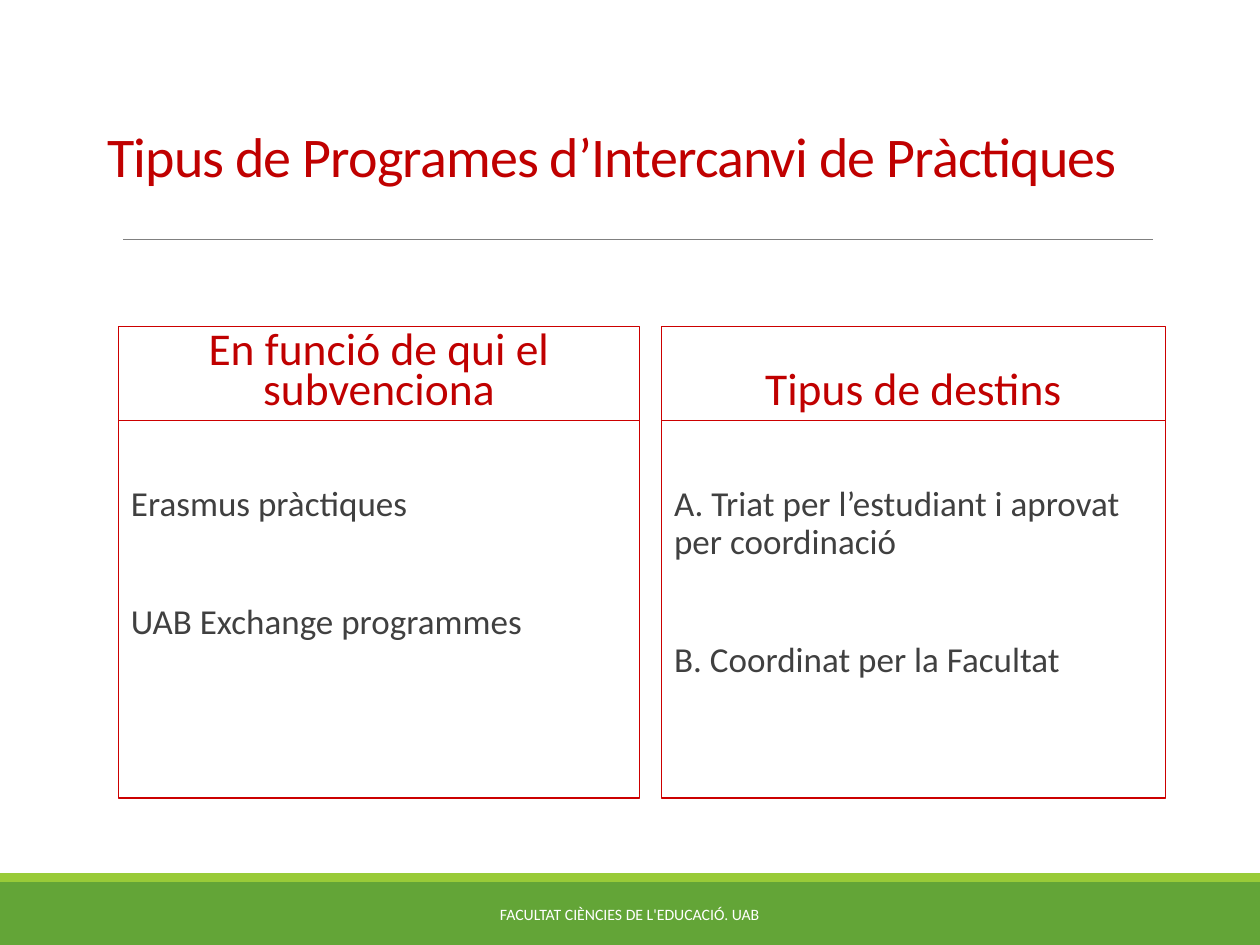
from lxml import etree
from pptx import Presentation
from pptx.dml.color import RGBColor
from pptx.enum import shapes, text
from pptx.oxml.ns import qn
from pptx.util import Pt

RED = RGBColor(0xC0, 0x00, 0x00)
BORDER = RGBColor(0xCC, 0x00, 0x00)
GRAY = RGBColor(0x80, 0x80, 0x80)
DARK = RGBColor(0x40, 0x40, 0x40)
GREEN = RGBColor(0x63, 0xA5, 0x37)
LIME = RGBColor(0x99, 0xCB, 0x38)
WHITE = RGBColor(0xFF, 0xFF, 0xFF)
HEAD_H = 53.8


def place(sp, x, y, w, h):
    """Move and size a shape, in points."""
    sp.left, sp.top, sp.width, sp.height = Pt(x), Pt(y), Pt(w), Pt(h)


def write(sp, lines, size, color, align, anchor):
    """Fill a shape with formatted paragraphs and return its text frame."""
    tf = sp.text_frame
    tf.text = "\n".join(lines)
    tf.word_wrap = True
    tf.auto_size = text.MSO_AUTO_SIZE.NONE
    tf.vertical_anchor = anchor
    for p in tf.paragraphs:
        p.alignment = align
        p.space_before = Pt(0)
        f = p.runs[0].font
        f.name, f.size, f.bold = "Calibri", Pt(size), False
        f.color.rgb = color
    return tf


def add_title(s, x, y, w, h, title):
    """Place the title and the rule below it."""
    sp = s.shapes.title
    place(sp, x, y, w, h)
    tf = write(sp, [title], 32, RED, text.PP_ALIGN.LEFT, text.MSO_ANCHOR.BOTTOM)
    tf.paragraphs[0].line_spacing = 0.85
    tf.paragraphs[0].runs[0].font._element.set("spc", "-50")
    rule_y = y + h + 25.2
    ln = s.shapes.add_connector(shapes.MSO_CONNECTOR.STRAIGHT, Pt(x + 16.5),
                                Pt(rule_y), Pt(x + 605), Pt(rule_y))
    ln.line.color.rgb = GRAY
    ln.line.width = Pt(0.5)
    etree.SubElement(ln._element.spPr, qn("a:effectLst"))


def add_column(s, idx, x, y, w, h, heading, items):
    """Place an outlined heading with its list below."""
    head, body = s.placeholders[idx], s.placeholders[idx + 1]
    place(head, x, y, w, HEAD_H)
    place(body, x, y + HEAD_H, w, h - HEAD_H)
    for sp in (head, body):
        sp.line.color.rgb = BORDER
        sp.line.width = Pt(0.75)
        sp.text_frame.margin_left = sp.text_frame.margin_right = 0
    tf = write(head, [heading], 26, RED, text.PP_ALIGN.CENTER, text.MSO_ANCHOR.BOTTOM)
    tf.paragraphs[0].line_spacing = 0.75
    tf = write(body, items, 20, DARK, text.PP_ALIGN.LEFT, text.MSO_ANCHOR.TOP)
    tf.margin_top = Pt(37.6)
    for i, p in enumerate(tf.paragraphs):
        p.line_spacing = 0.9
        p.space_before = Pt(46 if i else 0)
        pPr = p._p.get_or_add_pPr()
        pPr.set("marL", str(Pt(7.2)))
        pPr.set("indent", "0")
        etree.SubElement(pPr, qn("a:buNone"))


def add_footer(s, x, y, w, h, label):
    """Draw the two-tone band with its centred label."""
    for top, height, color in ((y + 5, h - 5, GREEN), (y, 5, LIME)):
        sp = s.shapes.add_shape(shapes.MSO_SHAPE.RECTANGLE, Pt(x), Pt(top), Pt(w), Pt(height))
        sp.shadow.inherit = False
        sp.fill.solid()
        sp.fill.fore_color.rgb = color
        sp.line.fill.background()
    tb = s.shapes.add_textbox(Pt(x + 217.5), Pt(y + 9.3), Pt(284.5), Pt(28.8))
    write(tb, [label], 9, WHITE, text.PP_ALIGN.CENTER, text.MSO_ANCHOR.MIDDLE)


def main():
    """Build and save the slide."""
    prs = Presentation()
    prs.slide_width, prs.slide_height = Pt(720), Pt(540)
    s = prs.slides.add_slide(prs.slide_layouts[4])
    add_footer(s, 0, 499, 720, 41, "FACULTAT CIÈNCIES DE L'EDUCACIÓ. UAB")
    add_title(s, 54, 49, 612, 62.6, "Tipus de Programes d’Intercanvi de Pràctiques")
    add_column(s, 1, 67.6, 186.5, 298, 269.5, "En funció de qui el subvenciona",
               ["Erasmus pràctiques", "UAB Exchange programmes"])
    add_column(s, 3, 378, 186.5, 288, 269.5, "Tipus de destins",
               ["A. Triat per l’estudiant i aprovat per coordinació",
                "B. Coordinat per la Facultat"])
    prs.save("out.pptx")


if __name__ == "__main__":
    main()
